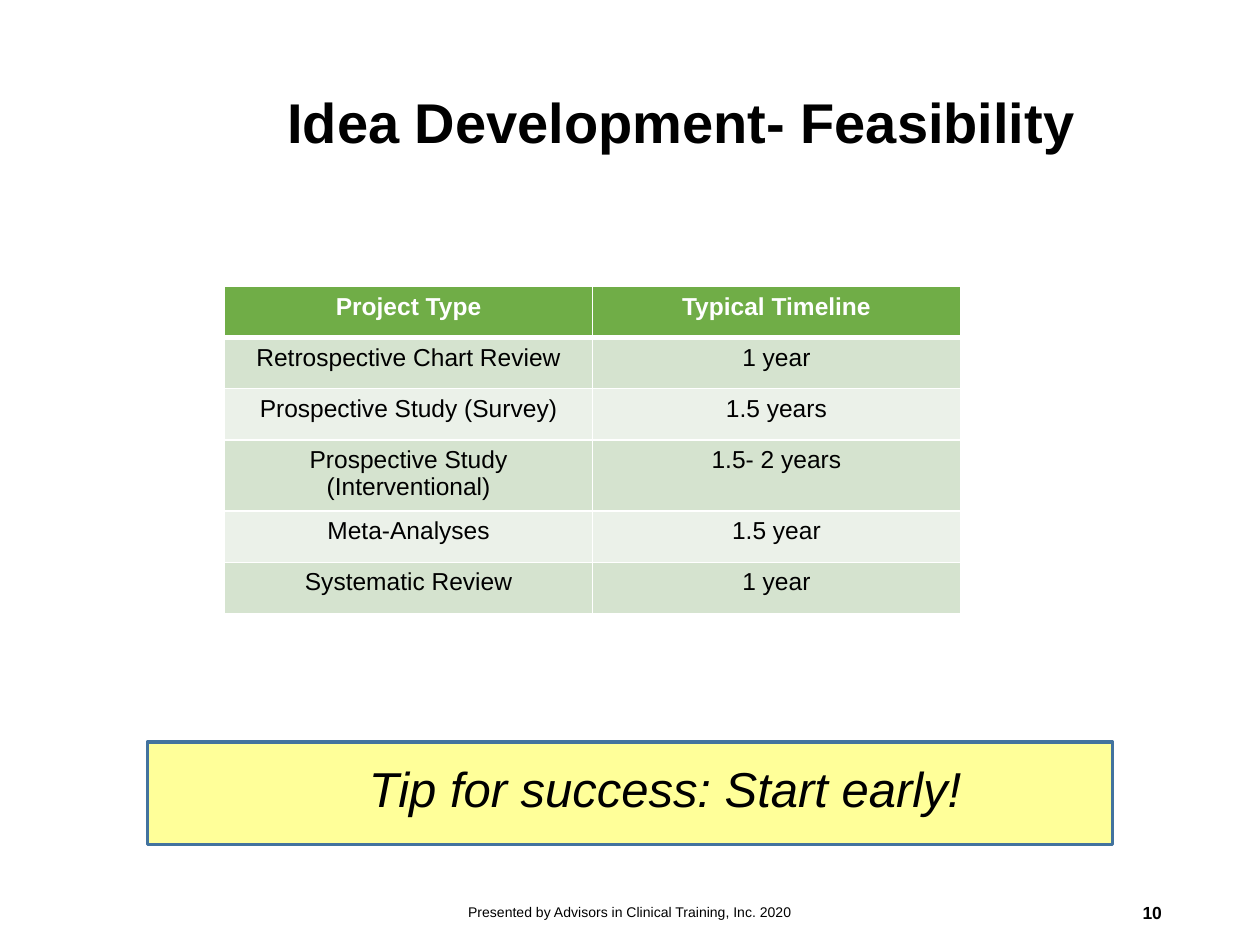
import pptx
import pptx.dml.color
import pptx.enum.shapes
import pptx.enum.text
import pptx.oxml
import pptx.oxml.ns
import pptx.util

Pt = pptx.util.Pt
ALIGN = pptx.enum.text.PP_ALIGN
ANCHOR = pptx.enum.text.MSO_ANCHOR


def tint(code):
    return pptx.dml.color.RGBColor.from_string(code)


class Deck:
    font = "Arial"
    ink = "000000"
    white = "FFFFFF"
    head = "70AD47"
    bands = ("D5E3CF", "EBF1E9")

    def __init__(self, wide, high):
        self.prs = pptx.Presentation()
        self.prs.slide_width = Pt(wide)
        self.prs.slide_height = Pt(high)
        self.slide = self.prs.slides.add_slide(self.prs.slide_layouts[5])

    def letter(self, frame, text, size, align=ALIGN.LEFT, color=ink,
               bold=False, italic=False):
        frame.text = text
        para = frame.paragraphs[0]
        para.alignment = align
        for run in para.runs:
            font = run.font
            font.name, font.size = self.font, Pt(size)
            font.bold, font.italic = bold, italic
            font.color.rgb = tint(color)
        return para

    def title(self, box, text, size):
        shape = self.slide.shapes.title
        shape.left, shape.top, shape.width, shape.height = map(Pt, box)
        frame = shape.text_frame
        frame.word_wrap = True
        frame.auto_size = pptx.enum.text.MSO_AUTO_SIZE.NONE
        frame.vertical_anchor = ANCHOR.MIDDLE
        frame.margin_left = frame.margin_right = Pt(7.2)
        frame.margin_top = frame.margin_bottom = Pt(7.2)
        self.letter(frame, text, size, bold=True).line_spacing = 0.9

    def panel(self, box, fill, line, width):
        shape = self.slide.shapes.add_shape(
            pptx.enum.shapes.MSO_SHAPE.RECTANGLE, *map(Pt, box))
        shape.shadow.inherit = False
        shape.fill.solid()
        shape.fill.fore_color.rgb = tint(fill)
        shape.line.color.rgb = tint(line)
        shape.line.width = Pt(width)

    def label(self, box, text, size, anchor=ANCHOR.MIDDLE, **style):
        frame = self.slide.shapes.add_textbox(*map(Pt, box)).text_frame
        frame.word_wrap = True
        frame.vertical_anchor = anchor
        return self.letter(frame, text, size, **style)

    def edge(self, cell, side, width):
        space = pptx.oxml.ns.nsdecls("a")
        cell._tc.get_or_add_tcPr().append(pptx.oxml.parse_xml(
            f'<a:ln{side} {space} w="{Pt(width)}"><a:solidFill>'
            f'<a:srgbClr val="{self.white}"/></a:solidFill></a:ln{side}>'))

    def table(self, box, rows, highs, size):
        grid = self.slide.shapes.add_table(
            len(rows), len(rows[0]), *map(Pt, box)).table
        for r, row in enumerate(rows):
            grid.rows[r].height = Pt(highs[r])
            top = r == 0
            for c, text in enumerate(row):
                cell = grid.cell(r, c)
                # The rule under the header is heavier
                for side in "LRTB":
                    heavy = (r, side) in ((0, "B"), (1, "T"))
                    self.edge(cell, side, 3 if heavy else 1)
                cell.fill.solid()
                cell.fill.fore_color.rgb = tint(
                    self.head if top else self.bands[(r - 1) % 2])
                self.letter(cell.text_frame, text, size, ALIGN.CENTER,
                            self.white if top else self.ink, bold=top)


def main():
    deck = Deck(720, 540)
    deck.title((157, 19.5, 514, 104.5), "Idea Development- Feasibility", 32)

    # Tip banner
    deck.panel((84.25, 424, 551.5, 58.5), "FFFF99", "43739E", 2)
    tip = deck.label((167.75, 433.5, 451.5, 58.5),
                     "Tip for success: Start early!", 28,
                     anchor=ANCHOR.TOP, italic=True)
    tip.line_spacing = 0.9
    props = tip._p.get_or_add_pPr()
    props.set("marL", str(Pt(58.5)))
    props.set("indent", str(Pt(-22.5)))

    # Timelines by project type
    rows = [
        ("Project Type", "Typical Timeline"),
        ("Retrospective Chart Review", "1 year"),
        ("Prospective Study (Survey)", "1.5 years"),
        ("Prospective Study (Interventional)", "1.5- 2 years"),
        ("Meta-Analyses", "1.5 year"),
        ("Systematic Review", "1 year"),
    ]
    highs = [29.2, 29.2, 29.2, 38, 29.2, 29.2]
    deck.table((128.4, 163.7, 420.4, sum(highs)), rows, highs, 14)

    # Footer and slide number
    deck.label((238.5, 507, 243, 28.75),
               "Presented by Advisors in Clinical Training, Inc. 2020", 8,
               align=ALIGN.CENTER)
    deck.label((605.5, 507, 65.5, 28.75), "10", 10,
               align=ALIGN.RIGHT, bold=True)

    deck.prs.save("out.pptx")


if __name__ == "__main__":
    main()
